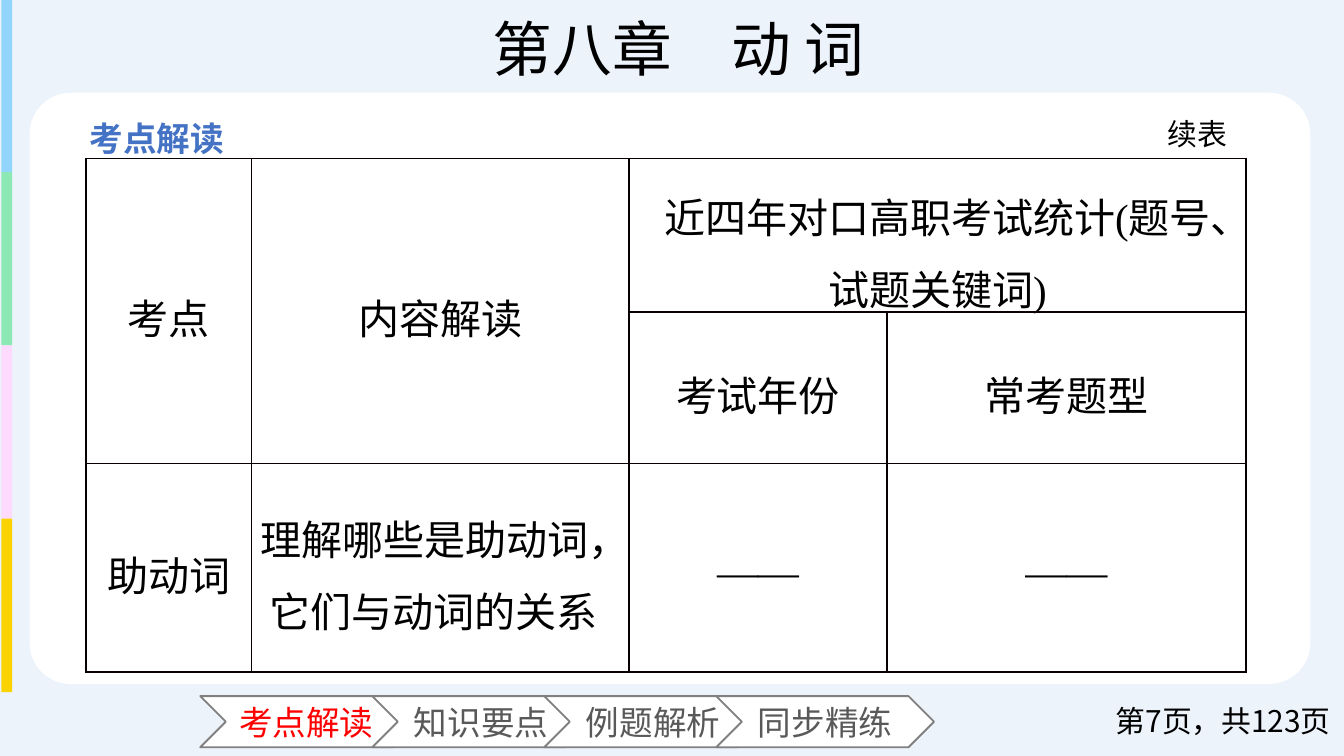
from lxml.etree import SubElement
from pptx import Presentation
from pptx.dml.color import RGBColor
from pptx.enum.shapes import MSO_SHAPE
from pptx.enum.text import MSO_ANCHOR, PP_ALIGN
from pptx.oxml.ns import qn
from pptx.util import Inches, Pt

SANS = "Noto Sans CJK SC"
SERIF = "Times New Roman"
BLACK = "000000"
WHITE = "FFFFFF"
GRAY = "808080"
BORDER = "080000"
STRIPES = ["91D5FD", "8CE9B4", "FEDAFE", "FBD302"]
SECTIONS = ["考点解读", "知识要点", "例题解析", "同步精练"]
COLUMNS = [1.23, 2.81, 1.92, 2.67]
ROWS = [1.14, 1.13, 1.55]
CELLS = [
    ["考点", "内容解读", "近四年对口高职考试统计(题号、试题关键词)", ""],
    ["", "", "考试年份", "常考题型"],
    ["助动词", "理解哪些是助动词， 它们与动词的关系", "——", "——"],
]
MERGES = [((0, 0), (1, 0)), ((0, 1), (1, 1)), ((0, 2), (0, 3))]


def rgb(value):
    """Turn a hex string into a colour."""
    return RGBColor.from_string(value)


def write(frame, text, size, color=BLACK, face=SANS, align=PP_ALIGN.LEFT,
          anchor=MSO_ANCHOR.TOP, bold=False):
    """Fill a text frame with one formatted paragraph."""
    frame.word_wrap = True
    frame.vertical_anchor = anchor
    paragraph = frame.paragraphs[0]
    paragraph.text = text
    style_paragraph(paragraph, size, color, face, align, bold)


def style_paragraph(paragraph, size, color, face, align, bold=False):
    """Set alignment and the Latin and East Asian fonts of a paragraph."""
    paragraph.alignment = align
    font = paragraph.font
    font.size, font.bold, font.name = Pt(size), bold, face
    font.color.rgb = rgb(color)
    defaults = paragraph._p.find(".//" + qn("a:defRPr"))
    SubElement(defaults, qn("a:ea"), typeface=SANS)


def add_label(slide, box, text, size, **style):
    """Add a text box."""
    label = slide.shapes.add_textbox(*map(Inches, box))
    write(label.text_frame, text, size, **style)


def add_block(slide, kind, box, fill, line=None):
    """Add a flat preset shape."""
    block = slide.shapes.add_shape(kind, *map(Inches, box))
    block.shadow.inherit = False
    block.fill.solid()
    block.fill.fore_color.rgb = rgb(fill)
    if line:
        block.line.color.rgb = rgb(line)
        block.line.width = Pt(1)
    else:
        block.line.fill.background()
    return block


def add_navigation(slide):
    """Add the row of chevrons with the current section in red."""
    for index, section in enumerate(SECTIONS):
        current = index == 0
        chevron = add_block(slide, MSO_SHAPE.CHEVRON,
                            (1.49 + 1.28 * index, 5.18, 1.62, 0.38), WHITE, GRAY)
        write(chevron.text_frame, section, 18, "FF0000" if current else "595959",
              align=PP_ALIGN.JUSTIFY if current else PP_ALIGN.CENTER,
              anchor=MSO_ANCHOR.MIDDLE)


def outline_cell(cell):
    """Draw all four borders of a table cell."""
    properties = cell._tc.get_or_add_tcPr()
    for side in ("lnL", "lnR", "lnT", "lnB"):
        edge = SubElement(properties, qn(f"a:{side}"), w=str(Pt(1)))
        fill = SubElement(edge, qn("a:solidFill"))
        SubElement(fill, qn("a:srgbClr"), val=BORDER)


def format_cell(cell, text, side_margin, end_margin, align):
    """Write a cell with its margins, borders and no fill."""
    outline_cell(cell)
    cell.fill.background()
    cell.margin_left = cell.margin_right = Inches(side_margin)
    cell.margin_top = cell.margin_bottom = Inches(end_margin)
    cell.vertical_anchor = MSO_ANCHOR.MIDDLE
    paragraph = cell.text_frame.paragraphs[0]
    paragraph.text = text
    paragraph.line_spacing = 1.2
    style_paragraph(paragraph, 22, BLACK, SERIF, align)


def add_exam_table(slide):
    """Add the table of exam topics."""
    box = (0.64, 1.18, sum(COLUMNS), sum(ROWS))
    table = slide.shapes.add_table(len(ROWS), len(COLUMNS), *map(Inches, box)).table
    table.first_row = table.horz_banding = False
    for column, width in zip(table.columns, COLUMNS):
        column.width = Inches(width)
    for row, height in zip(table.rows, ROWS):
        row.height = Inches(height)
    for r, texts in enumerate(CELLS):
        for c, text in enumerate(texts):
            margins = (0.07, 0) if r == 2 and c < 2 else (0.19, 0.12)
            align = PP_ALIGN.LEFT if (r, c) == (2, 1) else PP_ALIGN.CENTER
            format_cell(table.cell(r, c), text, *margins, align)
    for first, last in MERGES:
        table.cell(*first).merge(table.cell(*last))


def add_title(slide):
    """Place and format the chapter title."""
    title = slide.shapes.title
    title.left, title.top, title.width, title.height = map(
        Inches, (1.76, 0.04, 6.58, 0.64))
    write(title.text_frame, "第八章　动 词", 32, face=SERIF, align=PP_ALIGN.CENTER)


def main():
    """Build and save the slide."""
    deck = Presentation()
    deck.slide_width, deck.slide_height = Inches(10), Inches(10 * 9 / 16)
    slide = deck.slides.add_slide(deck.slide_layouts[5])
    slide.background.fill.solid()
    slide.background.fill.fore_color.rgb = rgb("ECF3FB")

    add_title(slide)
    for index, color in enumerate(STRIPES):
        add_block(slide, MSO_SHAPE.RECTANGLE,
                  (0.01, 1.29 * index - 0.01, 0.08, 1.29), color)
    panel = add_block(slide, MSO_SHAPE.ROUNDED_RECTANGLE, (0.22, 0.69, 9.53, 4.4), WHITE)
    panel.adjustments[0] = 0.07
    add_label(slide, (0.57, 0.83, 1.8, 0.4), SECTIONS[0], 18, color="4472C4", bold=True)
    add_navigation(slide)
    add_label(slide, (7.97, 5.21, 2.03, 0.3), "第7页，共123页", 16,
              align=PP_ALIGN.RIGHT, anchor=MSO_ANCHOR.MIDDLE)
    add_exam_table(slide)
    add_label(slide, (8.59, 0.81, 0.77, 0.27), "续表", 16)
    deck.save("out.pptx")


if __name__ == "__main__":
    main()
